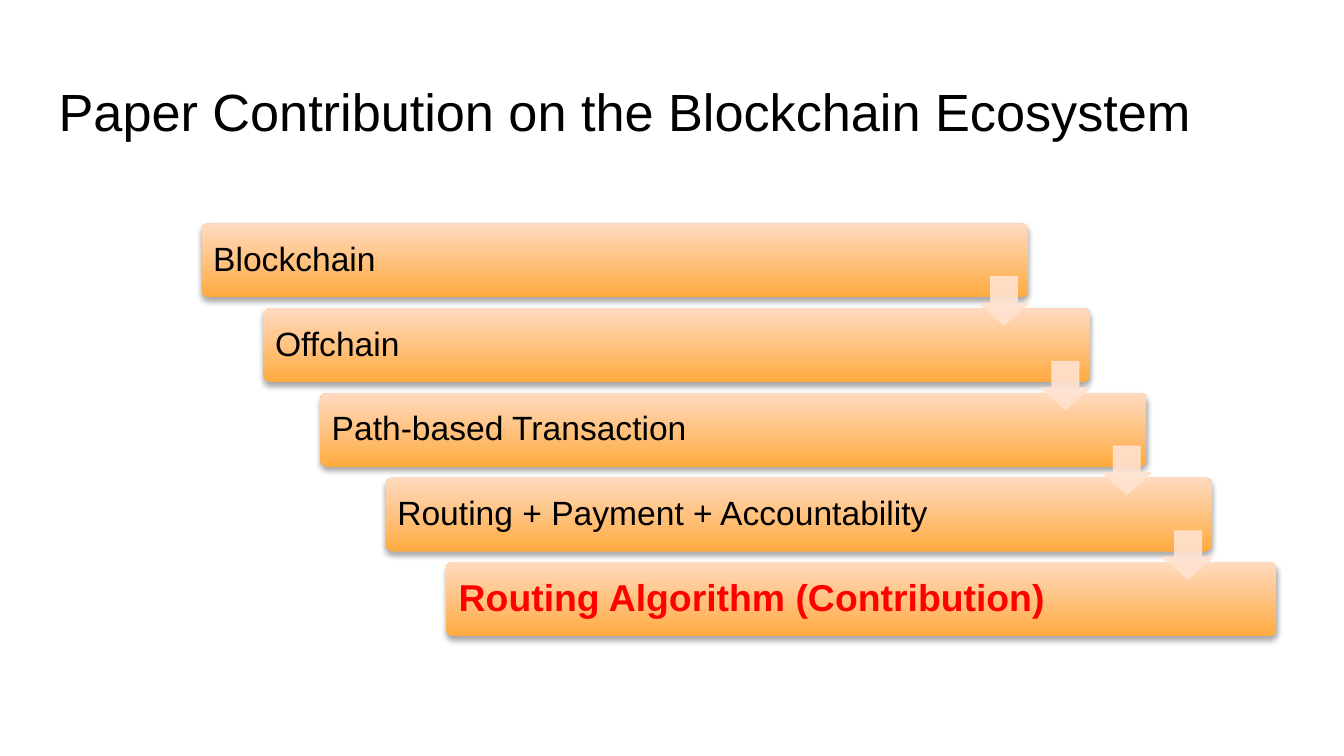
from lxml.etree import SubElement
from pptx import Presentation
from pptx.dml.color import RGBColor
from pptx.enum.shapes import MSO_SHAPE
from pptx.enum.text import MSO_ANCHOR
from pptx.oxml.ns import qn
from pptx.util import Cm, Pt

COLORS = {
    "text": "000000",
    "highlight": "FF0000",
    "bar_bottom": "FFAB40",
    "bar_top": "FFDAC0",
    "arrow": "FFE2CF",
    "shadow": "000000",
}


def color(name):
    return RGBColor.from_string(COLORS[name])


def write(box, text, size=18, fill="text", bold=False, inset=0.18,
          anchor=MSO_ANCHOR.MIDDLE, line_spacing=0.9):
    """Put one formatted paragraph into a box."""
    frame = box.text_frame
    frame.word_wrap = True
    frame.vertical_anchor = anchor
    frame.margin_left = frame.margin_right = Cm(inset)
    frame.margin_top = frame.margin_bottom = Cm(inset)
    para = frame.paragraphs[0]
    para.line_spacing = line_spacing
    span = para.add_run()
    span.text = text
    span.font.name = "Arial"
    span.font.size = Pt(size)
    span.font.bold = bold
    span.font.color.rgb = color(fill)


def set_alpha(parent, percent):
    """Make the solid colour below an element partly transparent."""
    for tint in parent.iter(qn("a:srgbClr")):
        SubElement(tint, qn("a:alpha"), val=str(percent * 1000))


class Staircase:
    def __init__(self, page):
        self.page = page

    def text(self, left, top, width, height, text, **style):
        box = self.page.shapes.add_textbox(Cm(left), Cm(top), Cm(width), Cm(height))
        write(box, text, **style)

    def shape(self, kind, left, top, width, height, *adjustments):
        shape = self.page.shapes.add_shape(
            kind, Cm(left), Cm(top), Cm(width), Cm(height))
        for index, value in enumerate(adjustments):
            shape.adjustments[index] = value
        shape.shadow.inherit = False
        return shape

    def bar(self, left, top, width, height):
        bar = self.shape(MSO_SHAPE.ROUNDED_RECTANGLE, left, top, width, height, 0.1)
        bar.line.fill.background()
        bar.fill.gradient()
        bar.fill.gradient_angle = 90
        for stop, name in zip(bar.fill.gradient_stops, ("bar_bottom", "bar_top")):
            stop.color.rgb = color(name)
        # Soft shadow straight below the bar
        effects = bar.element.spPr.find(qn("a:effectLst"))
        shadow = SubElement(effects, qn("a:outerShdw"), blurRad=str(Pt(3.1)),
                            dist=str(Pt(1.8)), dir="5400000", rotWithShape="0")
        SubElement(shadow, qn("a:srgbClr"), val=COLORS["shadow"])
        set_alpha(shadow, 35)

    def arrow(self, left, top, size):
        arrow = self.shape(MSO_SHAPE.DOWN_ARROW, left, top, size, size, 0.55, 0.45)
        arrow.fill.solid()
        arrow.fill.fore_color.rgb = color("arrow")
        arrow.line.color.rgb = color("arrow")
        arrow.line.width = Pt(0.75)
        set_alpha(arrow.element.spPr, 90)


def main():
    deck = Presentation()
    deck.slide_width, deck.slide_height = Cm(25.4), Cm(14.28)
    stairs = Staircase(deck.slides.add_slide(deck.slide_layouts[6]))

    # Title
    stairs.text(0.86, 1.24, 23.67, 1.6,
                "Paper Contribution on the Blockchain Ecosystem",
                size=28, inset=0.25, anchor=MSO_ANCHOR.TOP, line_spacing=1)

    # Steps: left edge, bar width, label, label format
    steps = [
        (3.81, 15.62, "Blockchain", {}),
        (4.98, 15.62, "Offchain", {}),
        (6.05, 15.62, "Path-based Transaction", {}),
        (7.29, 15.62, "Routing + Payment + Accountability", {}),
        (8.43, 15.7, "Routing Algorithm (Contribution)",
         {"size": 20, "fill": "highlight", "bold": True, "inset": 0.2}),
    ]
    first_top, pitch = 4.22, 1.6
    for row, (left, width, label, style) in enumerate(steps):
        top = first_top + row * pitch
        stairs.bar(left, top, width, 1.4)
        stairs.text(left + 0.04, top + 0.04, 13.5, 1.32, label, **style)

    # Arrows between neighbouring steps
    for row in range(len(steps) - 1):
        stairs.arrow(18.52 + row * 1.16, 5.23 + row * pitch, 0.91)

    deck.save("out.pptx")


if __name__ == "__main__":
    main()
